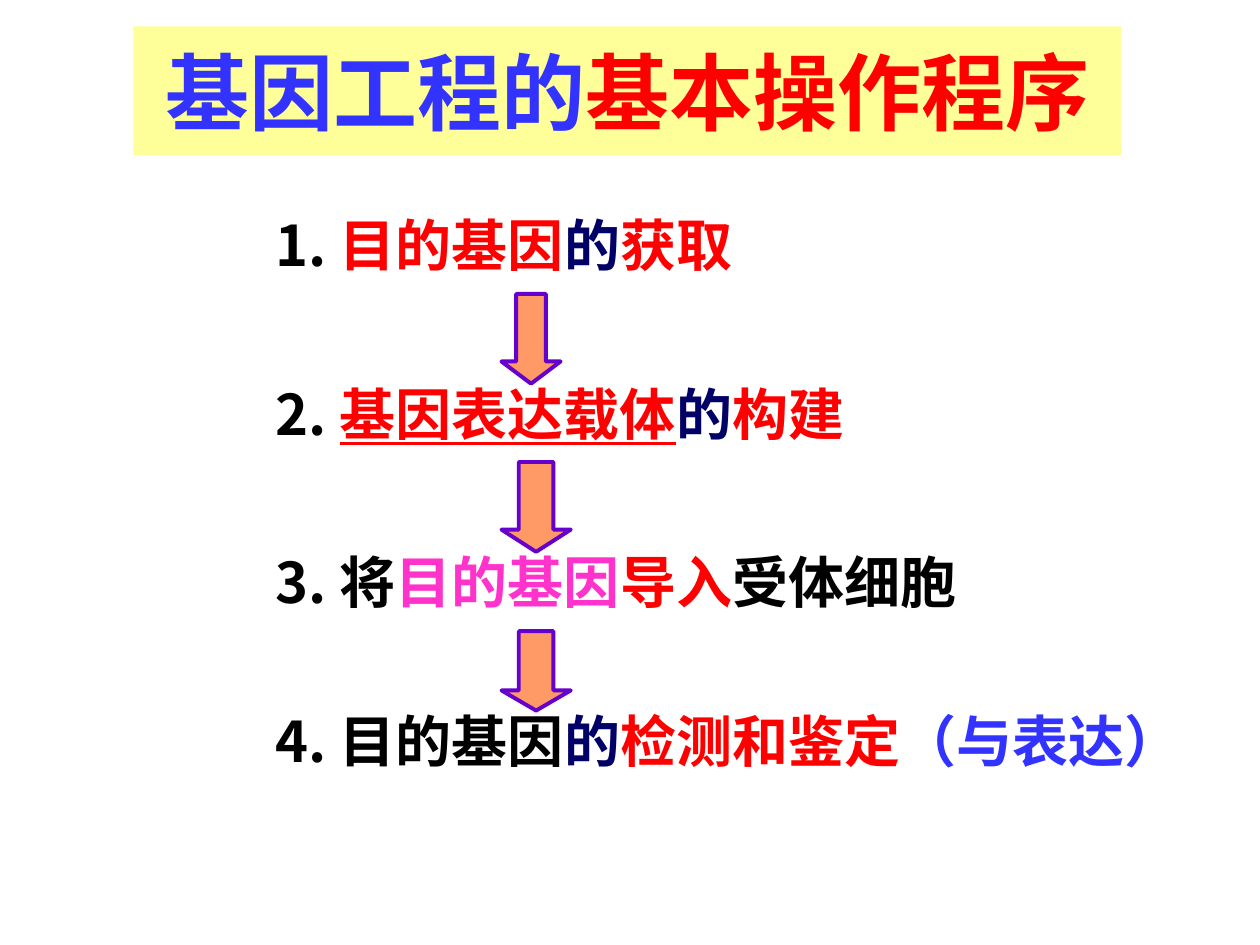
"""Build a slide listing the four basic steps of genetic engineering."""
import typing

import lxml.etree
import pptx
import pptx.dml.color
import pptx.enum.shapes
import pptx.enum.text
import pptx.oxml.ns
import pptx.util

SLIDE_WIDTH = pptx.util.Inches(10)
SLIDE_HEIGHT = pptx.util.Inches(7.5)
STEP_LEFT = 0.209
STEP_HEIGHT = 0.084
ARROW_LEFT = 0.398
BLACK, RED, NAVY, BLUE, PINK = "000000", "FF0000", "000066", "3333FF", "FF33CC"
CJK_FONT = "Noto Sans CJK SC"


class Piece(typing.NamedTuple):
    """A stretch of text in one colour."""

    text: str
    color: str
    underline: bool = False


class Step(typing.NamedTuple):
    """A numbered step, placed by shares of the slide's size."""

    top: float
    width: float
    pieces: list[Piece]


class Arrow(typing.NamedTuple):
    """A down arrow between steps, placed by shares of the slide's size."""

    top: float
    width: float
    height: float
    head: float


TITLE = [Piece("基因工程的", BLUE), Piece("基本操作程序", RED)]
STEPS = [
    Step(0.216, 0.457, [Piece("1. ", BLACK), Piece("目的基因", RED),
                        Piece("的", NAVY), Piece("获取", RED)]),
    Step(0.395, 0.536, [Piece("2. ", BLACK), Piece("基因表达载体", RED, True),
                        Piece("的", NAVY), Piece("构建", RED)]),
    Step(0.573, 0.598, [Piece("3. 将", BLACK), Piece("目的基因", PINK),
                        Piece("导入", RED), Piece("受体细胞", BLACK)]),
    Step(0.741, 0.74, [Piece("4. 目的基因", BLACK), Piece("的", NAVY),
                       Piece("检测和鉴定", RED), Piece("（与表达）", BLUE)]),
]
ARROWS = [
    Arrow(0.311, 0.047, 0.095, 0.375),
    Arrow(0.489, 0.055, 0.095, 0.32),
    Arrow(0.668, 0.055, 0.084, 0.29),
]


def rgb(color: str) -> pptx.dml.color.RGBColor:
    """Turn a hex string into a colour."""
    return pptx.dml.color.RGBColor.from_string(color)


def area(left: float, top: float, width: float, height: float) -> tuple[int, ...]:
    """Turn shares of the slide's size into lengths."""
    return (int(left * SLIDE_WIDTH), int(top * SLIDE_HEIGHT),
            int(width * SLIDE_WIDTH), int(height * SLIDE_HEIGHT))


def add_text(paragraph, text: str, *, size: float, font: str, color: str,
             underline: bool = False) -> None:
    """Append a bold run with the given format."""
    run = paragraph.add_run()
    run.text = text
    run.font.size = pptx.util.Pt(size)
    run.font.name = font
    run.font.bold = True
    run.font.underline = underline
    run.font.color.rgb = rgb(color)
    east_asian = lxml.etree.Element(pptx.oxml.ns.qn("a:ea"), typeface=CJK_FONT)
    run.font._element.find(pptx.oxml.ns.qn("a:latin")).addnext(east_asian)


def draw_title(slide) -> None:
    """Draw the title on its yellow band."""
    band = slide.shapes.add_shape(pptx.enum.shapes.MSO_SHAPE.RECTANGLE,
                                  *area(0.106, 0.028, 0.784, 0.136))
    band.shadow.inherit = False
    band.fill.solid()
    band.fill.fore_color.rgb = rgb("FFFF99")
    band.line.fill.background()
    frame = band.text_frame
    frame.word_wrap = True
    frame.vertical_anchor = pptx.enum.text.MSO_ANCHOR.MIDDLE
    paragraph = frame.paragraphs[0]
    paragraph.alignment = pptx.enum.text.PP_ALIGN.CENTER
    for piece in TITLE:
        add_text(paragraph, piece.text, size=48, font="Calibri", color=piece.color)


def draw_arrow(slide, arrow: Arrow) -> None:
    """Draw an arrow leading to the next step."""
    shape = slide.shapes.add_shape(
        pptx.enum.shapes.MSO_SHAPE.DOWN_ARROW,
        *area(ARROW_LEFT, arrow.top, arrow.width, arrow.height))
    shape.shadow.inherit = False
    shape.adjustments[0] = 0.5
    shape.adjustments[1] = arrow.head
    shape.fill.solid()
    shape.fill.fore_color.rgb = rgb("FF9966")
    shape.line.color.rgb = rgb("6600CC")
    shape.line.width = pptx.util.Pt(2.25)


def draw_step(slide, step: Step) -> None:
    """Draw one numbered step."""
    box = slide.shapes.add_textbox(*area(STEP_LEFT, step.top, step.width, STEP_HEIGHT))
    frame = box.text_frame
    frame.word_wrap = True
    frame.auto_size = pptx.enum.text.MSO_AUTO_SIZE.SHAPE_TO_FIT_TEXT
    for piece in step.pieces:
        add_text(frame.paragraphs[0], piece.text, size=32, font=CJK_FONT,
                 color=piece.color, underline=piece.underline)


def main() -> None:
    """Build and save the slide."""
    deck = pptx.Presentation()
    deck.slide_width, deck.slide_height = SLIDE_WIDTH, SLIDE_HEIGHT
    slide = deck.slides.add_slide(deck.slide_layouts[6])
    draw_title(slide)
    for arrow in ARROWS:
        draw_arrow(slide, arrow)
    for step in STEPS:
        draw_step(slide, step)
    deck.save("out.pptx")


if __name__ == "__main__":
    main()
